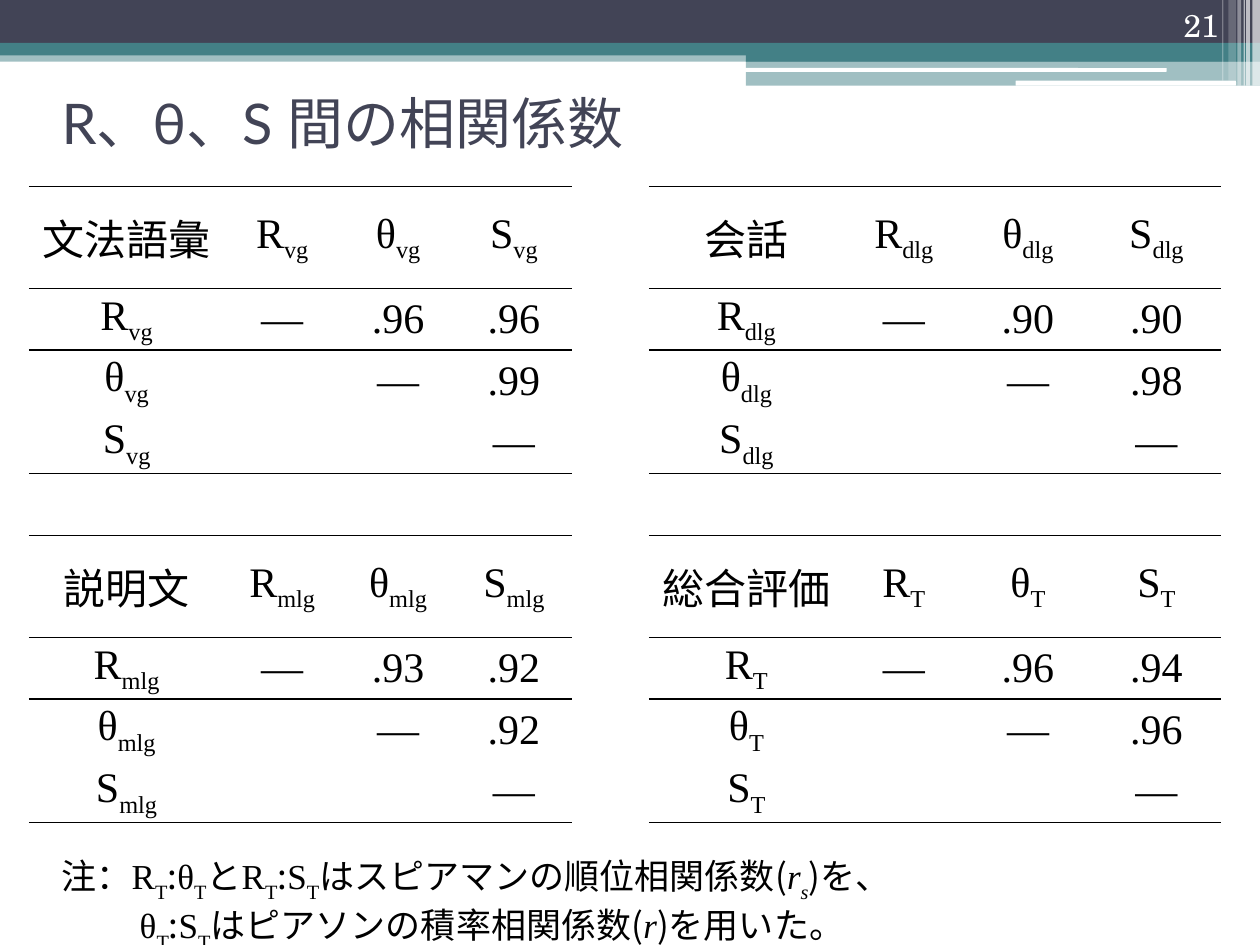
from dataclasses import dataclass
from lxml.etree import SubElement
from pptx import Presentation
from pptx.dml.color import RGBColor
from pptx.enum.shapes import MSO_SHAPE as Shape
from pptx.enum.text import MSO_ANCHOR as Anchor, PP_ALIGN as Align
from pptx.oxml.ns import qn
from pptx.slide import Slide
from pptx.util import Inches, Pt

NO_GRID = "{2D5ABB26-0587-4C30-8999-92F81FD0307C}"


def paint(color_format, hex_color):
    color_format.rgb = RGBColor.from_string(hex_color)


@dataclass
class CorrelationSlide:
    """Style and drawing methods for the correlation slide."""
    slide: Slide
    serif: str = "Times New Roman"
    sans: str = "Noto Sans CJK JP"
    ink: str = "000000"
    navy: str = "424456"
    teal: str = "438086"
    white: str = "FFFFFF"

    def bar(self, box, color, opacity=100, rounded=False):
        kind = Shape.ROUNDED_RECTANGLE if rounded else Shape.RECTANGLE
        bar = self.slide.shapes.add_shape(kind, *map(Inches, box))
        bar.shadow.inherit = False
        bar.line.fill.background()
        bar.fill.solid()
        paint(bar.fill.fore_color, color)
        if opacity < 100:
            tint = bar.fill._xPr.find(f".//{qn('a:srgbClr')}")
            SubElement(tint, qn("a:alpha"), val=str(opacity * 1000))

    def style(self, paragraph, font, size, color, align=Align.LEFT):
        paragraph.alignment = align
        paragraph.font.name = font
        paragraph.font.size = Pt(size)
        paint(paragraph.font.color, color)
        SubElement(paragraph.font._element, qn("a:ea"), typeface=self.sans)

    def text(self, box, font, size, color, anchor=Anchor.TOP, align=Align.LEFT):
        frame = self.slide.shapes.add_textbox(*map(Inches, box)).text_frame
        frame.word_wrap = True
        frame.vertical_anchor = anchor
        paragraph = frame.paragraphs[0]
        self.style(paragraph, font, size, color, align)
        return paragraph

    def symbol(self, paragraph, label, depth, italic=None):
        base, _, index = label.partition("_")
        runs = [paragraph.add_run()]
        runs[0].text = base
        if index:
            runs.append(paragraph.add_run())
            runs[1].text = index
            runs[1].font._element.set("baseline", str(-1000 * depth))
        for run in runs:
            run.font.italic = italic
        return runs[0]

    def rule(self, cell, side):
        line = SubElement(cell._tc.get_or_add_tcPr(), qn(f"a:ln{side}"), w=str(Pt(1)))
        SubElement(SubElement(line, qn("a:solidFill")), qn("a:srgbClr"), val=self.ink)

    def table(self, left, top, widths, heights, contents, rules, gap_column):
        box = left, top, sum(widths), sum(heights)
        table = self.slide.shapes.add_table(len(heights), len(widths), *map(Inches, box)).table
        table.first_row = table.horz_banding = False
        table._tbl.tblPr.find(qn("a:tableStyleId")).text = NO_GRID
        for column, width in zip(table.columns, widths):
            column.width = Inches(width)
        for r, height in enumerate(heights):
            table.rows[r].height = Inches(height)
            for c in range(len(widths)):
                cell = table.cell(r, c)
                cell.margin_left = cell.margin_right = Inches(0.07)
                cell.margin_top = cell.margin_bottom = 0
                cell.vertical_anchor = Anchor.MIDDLE
                if c != gap_column:
                    for side in rules[r % len(rules)]:
                        self.rule(cell, side)
                cell.fill.background()
                paragraph = cell.text_frame.paragraphs[0]
                self.style(paragraph, self.serif, 24, self.ink, Align.CENTER)
                if (r, c) in contents:
                    self.symbol(paragraph, contents[r, c], 25)

    def note(self, box, lines, hanging):
        paragraph = self.text(box, self.serif, 20, self.ink)
        properties = paragraph._p.get_or_add_pPr()
        properties.set("marL", str(Inches(hanging)))
        properties.set("indent", str(-Inches(hanging)))
        for number, line in enumerate(lines):
            if number:
                paragraph.add_line_break()
            for piece in line.split("|"):
                run = self.symbol(paragraph, piece, 30, piece.startswith("r") or None)
                if piece in ("注：", ":", "(", ")"):
                    run.font.name = self.sans


def correlations():
    blocks = {
        (0, 0): ("文法語彙", "vg", (".96", ".96", ".99")),
        (0, 5): ("会話", "dlg", (".90", ".90", ".98")),
        (5, 0): ("説明文", "mlg", (".93", ".92", ".92")),
        (5, 5): ("総合評価", "T", (".96", ".94", ".96")),
    }
    contents = {}
    for (top, left), (title, index, values) in blocks.items():
        contents[top, left] = title
        for n, letter in enumerate("RθS", 1):
            contents[top, left + n] = contents[top + n, left] = f"{letter}_{index}"
            contents[top + n, left + n] = "―"
        for (r, c), value in zip(((1, 2), (1, 3), (2, 3)), values):
            contents[top + r, left + c] = value
    return contents


def main():
    deck = Presentation()
    deck.slide_width, deck.slide_height = Inches(10), Inches(7.5)
    page = CorrelationSlide(deck.slides.add_slide(deck.slide_layouts[6]))

    page.bar((0, 0.4, 10, 0.09), page.teal, 50)
    page.bar((0, 0, 10, 0.34), page.navy)
    page.bar((0, 0.34, 10, 0.1), page.teal)
    page.bar((5.92, 0.39, 4.08, 0.1), page.teal)
    page.bar((5.92, 0.48, 4.08, 0.2), page.teal, 50)
    page.bar((5.91, 0.54, 3.35, 0.03), page.white, rounded=True)
    page.bar((8.06, 0.64, 1.75, 0.04), page.white, rounded=True)
    stripes = ((9.94, 0.06, 0.68, 65), (9.89, 0.03, 0.68, 65), (9.87, 0.01, 0.68, 60),
               (9.82, 0.03, 0.68, 40), (9.75, 0.06, 0.64, 20), (9.7, 0.01, 0.64, 30))
    for left, width, height, opacity in stripes:
        page.bar((left, 0, width, height), page.white, opacity)

    title = page.text((0.39, 0.62, 9, 0.7), "Lato", 32, page.navy, Anchor.MIDDLE)
    title.add_run().text = "R、θ、S 間の相関係数"
    number = page.text((8.94, 0, 0.83, 0.4), "TeX Gyre Schola", 18, page.white,
                       Anchor.BOTTOM, Align.RIGHT)
    number.add_run().text = "21"

    block_heights = [0.81] + [0.49] * 3
    page.table(0.23, 1.48, [1.55, 0.92, 0.92, 0.92, 0.61, 1.55, 0.95, 1.02, 1.02],
               block_heights + [0.49] + block_heights, correlations(),
               ("TB", "T", "", "B", "TB"), gap_column=4)
    page.note((0.39, 6.73, 9.61, 0.77), (
        "注：|R_T|:|θ_T|と|R_T|:|S_T|は|スピアマンの順位相関係数|(|r_s|)|を、",
        "θ_T|:|S_T|は|ピアソンの積率相関係数|(|r|)|を用いた。"), hanging=0.62)
    deck.save("out.pptx")


if __name__ == "__main__":
    main()
